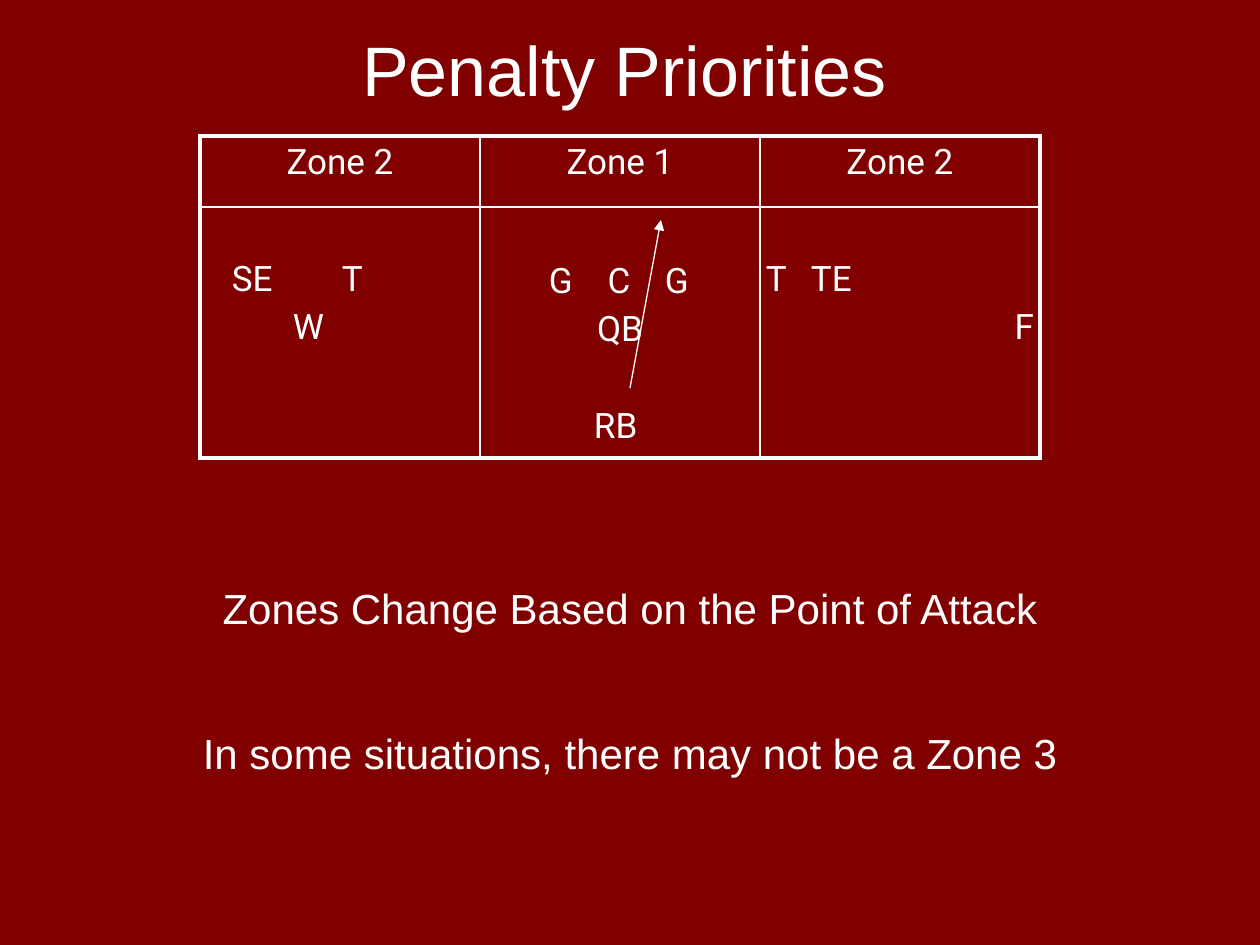
import pptx
import pptx.util
from lxml import etree
from pptx.dml.color import RGBColor
from pptx.enum.shapes import MSO_CONNECTOR
from pptx.enum.text import MSO_AUTO_SIZE, PP_ALIGN
from pptx.oxml.ns import qn

PX = 914400 / 126
MAROON = RGBColor(0x80, 0x00, 0x00)
WHITE = RGBColor(0xFF, 0xFF, 0xFF)
LEFT, CENTER, RIGHT = PP_ALIGN.LEFT, PP_ALIGN.CENTER, PP_ALIGN.RIGHT


def px(n):
    return pptx.util.Emu(round(n * PX))


def write(tf, lines, font, size):
    """Fill a text frame; each line is text, alignment, space before, tab stops, tab alignment."""
    for i, (text, align, before, stops, stop_align) in enumerate(lines):
        p = tf.paragraphs[0] if i == 0 else tf.add_paragraph()
        p.text = text
        p.alignment = align
        if before:
            p.space_before = pptx.util.Pt(before)
        if stops:
            tabs = etree.SubElement(p._p.get_or_add_pPr(), qn("a:tabLst"))
            for stop in stops:
                etree.SubElement(tabs, qn("a:tab"), pos=str(px(stop)), algn=stop_align)
        for r in p.runs:
            r.font.name = font
            r.font.size = pptx.util.Pt(size)
            r.font.color.rgb = WHITE


prs = pptx.Presentation()
prs.slide_width, prs.slide_height = px(1260), px(945)
s = prs.slides.add_slide(prs.slide_layouts[6])
s.background.fill.solid()
s.background.fill.fore_color.rgb = MAROON

# Title and closing notes
text_boxes = [
    ((73, 21, 1103, 89), 40, [("Penalty Priorities", CENTER, 0, (), "l")]),
    ((105, 577, 1050, 200), 24, [
        ("Zones Change Based on the Point of Attack", CENTER, 0, (), "l"),
        ("In some situations, there may not be a Zone 3", CENTER, 54, (), "l"),
    ]),
]
for box, size, lines in text_boxes:
    tf = s.shapes.add_textbox(*map(px, box)).text_frame
    tf.word_wrap = True
    tf.auto_size = MSO_AUTO_SIZE.SHAPE_TO_FIT_TEXT
    tf.margin_left = tf.margin_right = tf.margin_top = tf.margin_bottom = px(6)
    write(tf, lines, "Arial", size)

# Zone table: each cell has a top margin and its lines
cells = [
    [(6, [(zone, CENTER, 0, (), "l")]) for zone in ("Zone 2", "Zone 1", "Zone 2")],
    [
        (52, [("\tSE\tT", LEFT, 0, (26, 136), "l"),
              ("\tW", LEFT, 4, (87,), "l")]),
        (54, [("\tG\tC\tG", LEFT, 0, (75, 133, 191), "ctr"),
              ("QB", CENTER, 4, (), "l"),
              ("RB ", CENTER, 32, (), "l")]),
        (52, [("T\tTE", LEFT, 0, (45,), "l"),
              ("F", RIGHT, 4, (), "l")]),
    ],
]
frame = s.shapes.add_table(2, 3, px(200), px(136), px(840), px(322))
table = frame.table
table.first_row = table.horz_banding = False
for column in table.columns:
    column.width = px(280)
for row, height in zip(table.rows, (71, 251)):
    row.height = px(height)

for i, row in enumerate(cells):
    for j, (top, lines) in enumerate(row):
        cell = table.cell(i, j)
        cell.margin_left = cell.margin_right = cell.margin_bottom = px(6)
        cell.margin_top = px(top)
        write(cell.text_frame, lines, "Roboto", 20)
        outer_sides = {"lnL": j == 0, "lnR": j == 2, "lnT": i == 0, "lnB": i == 1}
        for side, outer in outer_sides.items():
            width = pptx.util.Pt(2.25 if outer else 1)
            ln = etree.SubElement(cell._tc.get_or_add_tcPr(), qn(f"a:{side}"), w=str(width))
            fill = etree.SubElement(ln, qn("a:solidFill"))
            etree.SubElement(fill, qn("a:srgbClr"), val=str(WHITE))
        cell.fill.background()

# Running back's path
run_line = s.shapes.add_connector(
    MSO_CONNECTOR.STRAIGHT, px(630), px(388), px(661), px(220))
run_line.line.color.rgb = WHITE
run_line.line.width = pptx.util.Pt(0.75)
etree.SubElement(run_line.line._get_or_add_ln(), qn("a:tailEnd"), type="triangle")
etree.SubElement(run_line._element.spPr, qn("a:effectLst"))

prs.save("out.pptx")
